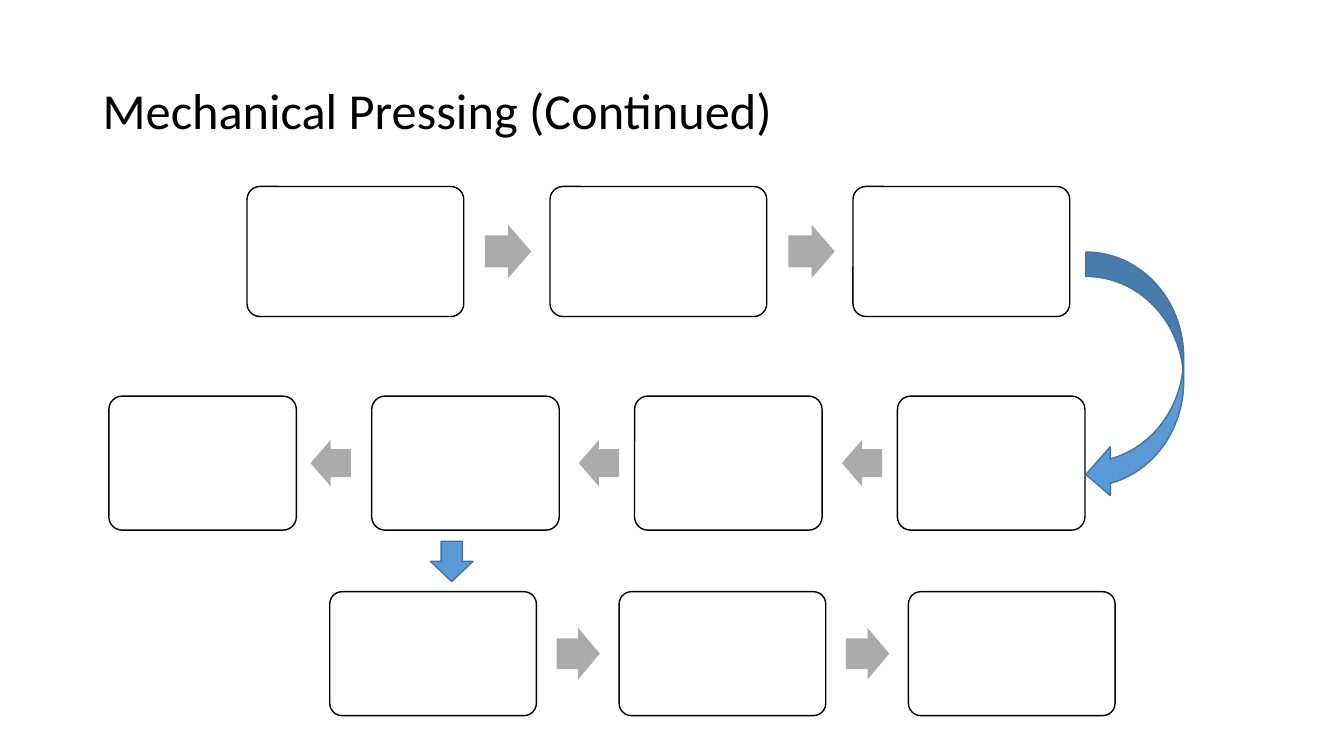
from pptx import Presentation
from pptx import util as u
from pptx.dml.color import RGBColor
from pptx.enum import shapes, text

WHITE = RGBColor(0xFF, 0xFF, 0xFF)
BLACK = RGBColor(0, 0, 0)
GREY = RGBColor(0xAB, 0xAB, 0xAB)
BLUE = RGBColor(0x5B, 0x9B, 0xD5)
DARK_BLUE = RGBColor(0x43, 0x73, 0x9E)
KIND = shapes.MSO_SHAPE

TITLE = "Mechanical Pressing (Continued)"

# Each row: first box, distance between box lefts, and the arrows in the gaps
ROWS = [
    dict(box=(2.45, 1.85, 2.15, 1.29), pitch=3.005, count=3,
         arrow=KIND.RIGHT_ARROW, arrow_size=(0.46, 0.53), arrow_lefts=(4.81, 7.82)),
    dict(box=(1.08, 3.93, 1.86, 1.33), pitch=2.607, count=4,
         arrow=KIND.LEFT_ARROW, arrow_size=(0.4, 0.46), arrow_lefts=(3.08, 5.74, 8.35)),
    dict(box=(3.27, 5.87, 2.05, 1.23), pitch=2.87, count=3,
         arrow=KIND.RIGHT_ARROW, arrow_size=(0.43, 0.51), arrow_lefts=(5.52, 8.39)),
]
ROW_LINKS = [
    (KIND.CURVED_LEFT_ARROW, (10.77, 2.5, 0.97, 2.45)),
    (KIND.DOWN_ARROW, (4.27, 5.37, 0.42, 0.4)),
]


def add_title(page, words, *, at, size, font, color):
    box = page.shapes.add_textbox(*map(u.Inches, at))
    frame = box.text_frame
    frame.word_wrap = True
    frame.vertical_anchor = text.MSO_ANCHOR.MIDDLE
    para = frame.paragraphs[0]
    para.line_spacing = 0.9
    span = para.add_run()
    span.text = words
    span.font.size = u.Pt(size)
    span.font.name = font
    span.font.color.rgb = color


def add_figure(page, kind, at, *, fill, line=None, adjust=()):
    figure = page.shapes.add_shape(kind, *map(u.Inches, at))
    figure.shadow.inherit = False
    figure.fill.solid()
    figure.fill.fore_color.rgb = fill
    if line is None:
        figure.line.fill.background()
    else:
        figure.line.color.rgb = line
        figure.line.width = u.Pt(1)
    for index, value in enumerate(adjust):
        figure.adjustments[index] = value


def add_row(page, row):
    left, top, width, height = row["box"]
    for column in range(row["count"]):
        add_figure(page, KIND.ROUNDED_RECTANGLE,
                   (left + column * row["pitch"], top, width, height),
                   fill=WHITE, line=BLACK, adjust=(0.1,))
    arrow_width, arrow_height = row["arrow_size"]
    arrow_top = top + (height - arrow_height) / 2
    for arrow_left in row["arrow_lefts"]:
        add_figure(page, row["arrow"],
                   (arrow_left, arrow_top, arrow_width, arrow_height),
                   fill=GREY, adjust=(0.6, 0.5))


def main():
    deck = Presentation()
    deck.slide_width, deck.slide_height = u.Inches(13.33), u.Inches(7.5)
    page = deck.slides.add_slide(deck.slide_layouts[6])
    add_title(page, TITLE, at=(0.92, 0.4, 11.5, 1.45), size=36,
              font="Calibri", color=BLACK)
    for row in ROWS:
        add_row(page, row)
    for kind, at in ROW_LINKS:
        add_figure(page, kind, at, fill=BLUE, line=DARK_BLUE)
    deck.save("out.pptx")


if __name__ == "__main__":
    main()
